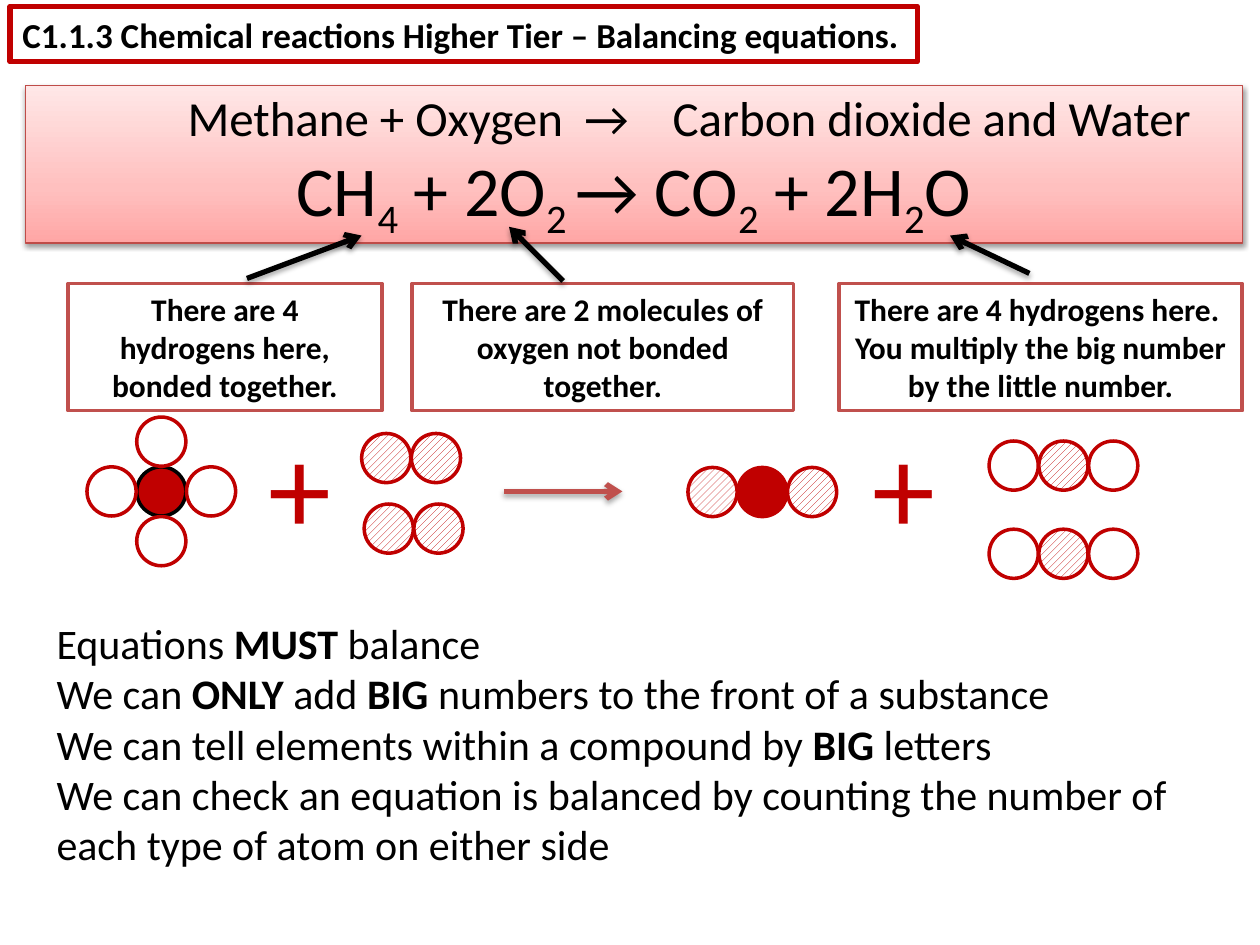
import pptx
import pptx.util
import pptx.dml.color
import pptx.enum.dml
import pptx.enum.shapes
import pptx.enum.text
import pptx.oxml
import pptx.oxml.ns

Inches, Pt = pptx.util.Inches, pptx.util.Pt
MSO = pptx.enum.shapes.MSO_SHAPE
ALIGN = pptx.enum.text.PP_ALIGN
ANCHOR = pptx.enum.text.MSO_ANCHOR
NS = pptx.oxml.ns.nsdecls("a")

HUES = {"red": "C00000", "rose": "C0504D", "edge": "BF4C48",
        "black": "000000", "white": "FFFFFF"}
FADE = [(0, "FFA6A5"), (35, "FFC0BF"), (100, "FFE7E7")]

# Content: *bold* and _subscript_ are marked in the text
TITLE = "*C1.1.3 Chemical reactions Higher Tier – Balancing equations.*"
WORDS = "\tMethane + Oxygen\t→\tCarbon dioxide and Water"
TABS = (1.19, 4.34, 5.04)
SYMBOLS = "CH_4_ + 2O_2 _→ CO_2_ + 2H_2_O"
RULES = [
    "Equations *MUST* balance",
    "We can *ONLY* add *BIG* numbers to the front of a substance",
    "We can tell elements within a compound by *BIG* letters",
    "We can check an equation is balanced by counting the number of "
    "each type of atom on either side",
]
# Note text, left, width, arrow start, arrow tip
NOTES = [
    ("*There are 4 hydrogens here, bonded together.*",
     0.54, 2.49, (1.96, 2.21), (2.87, 1.87)),
    ("*There are 2 molecules of oxygen not bonded together.*",
     3.27, 3.03, (4.47, 2.23), (4.04, 1.8)),
    ("*There are 4 hydrogens here.  You multiply the big number "
     "by the little number.*",
     6.66, 3.2, (8.17, 2.17), (7.54, 1.87)),
]
# Molecules: left, top, atoms as (element, column, row)
WATER = [("H", 0, 0), ("H", 2, 0), ("O", 1, 0)]
OXYGEN = [("O", 0, 0), ("O", 1, 0)]
METHANE = [("core", 1, 1), ("H", 2, 1), ("H", 0, 1), ("H", 1, 0), ("H", 1, 2)]
DIOXIDE = [("C", 1, 0), ("O", 0, 0), ("O", 2, 0)]
MOLES = [(0.69, 3.31, METHANE), (2.87, 3.44, OXYGEN), (2.89, 4, OXYGEN),
         (5.46, 3.71, DIOXIDE), (7.85, 3.5, WATER), (7.85, 4.2, WATER)]
ATOM, STEP = 0.39, 0.395
PLUSES = (2.03, 6.83)

prs = pptx.Presentation()
prs.slide_width, prs.slide_height = Inches(10), Inches(7.5)
slide = prs.slides.add_slide(prs.slide_layouts[6])


def rgb(name):
    return pptx.dml.color.RGBColor.from_string(HUES[name])


def shade(sppr, alpha, dist):
    """Replace any effect with a soft shadow that falls straight down."""
    for old in sppr.findall(pptx.oxml.ns.qn("a:effectLst")):
        sppr.remove(old)
    sppr.append(pptx.oxml.parse_xml(
        f'<a:effectLst {NS}><a:outerShdw blurRad="{Pt(3.1)}" dist="{Pt(dist)}" '
        f'dir="5400000" rotWithShape="0"><a:srgbClr val="{HUES["black"]}">'
        f'<a:alpha val="{alpha * 1000}"/></a:srgbClr></a:outerShdw></a:effectLst>'))


def form(kind, x, y, w, h, line, width, fill=None):
    part = slide.shapes.add_shape(kind, *map(Inches, (x, y, w, h)))
    part.shadow.inherit = False
    if fill:
        part.fill.solid()
        part.fill.fore_color.rgb = rgb(fill)
    else:
        part.fill.background()
    part.line.color.rgb = rgb(line)
    part.line.width = Pt(width)
    return part


def label(x, y, w, h):
    return slide.shapes.add_textbox(*map(Inches, (x, y, w, h)))


def write(part, text, size, color="black", align=ALIGN.LEFT,
          anchor=ANCHOR.MIDDLE, more=False):
    frame = part.text_frame
    frame.word_wrap = True
    frame.vertical_anchor = anchor
    para = frame.add_paragraph() if more else frame.paragraphs[0]
    para.alignment = align
    for i, chunk in enumerate(text.split("*")):
        for j, bit in enumerate(chunk.split("_")):
            if not bit:
                continue
            run = para.add_run()
            run.text = bit
            run.font.name, run.font.size = "Calibri", Pt(size)
            run.font.color.rgb = rgb(color)
            run.font.bold = i % 2 == 1
            if j % 2:
                run.font._element.set("baseline", "-25000")
    return para


def arrow(start, end, color):
    line = slide.shapes.add_connector(
        pptx.enum.shapes.MSO_CONNECTOR.STRAIGHT, *map(Inches, start + end))
    line.line.color.rgb = rgb(color)
    line.line.width = Pt(3)
    line.line._get_or_add_ln().append(
        pptx.oxml.parse_xml(f'<a:tailEnd {NS} type="arrow"/>'))
    shade(line._element.spPr, 35, 1.8)


# Title
write(form(MSO.RECTANGLE, 0.08, 0.05, 7.2, 0.44, "red", 3), TITLE, 20)

# Molecules, plus signs and reaction arrow
for left, top, atoms in MOLES:
    for kind, col, row in atoms:
        ball = form(MSO.OVAL, left + col * STEP, top + row * STEP, ATOM, ATOM,
                    "black" if kind == "core" else "red", 2,
                    "white" if kind == "H" else "red")
        if kind == "O":
            ball.fill.patterned()
            ball.fill.pattern = pptx.enum.dml.MSO_PATTERN.WIDE_UPWARD_DIAGONAL
            ball.fill.fore_color.rgb = rgb("red")
            ball.fill.back_color.rgb = rgb("white")
for x in PLUSES:
    write(label(x, 3.19, 0.55, 1.31), "+", 72, color="red", anchor=ANCHOR.TOP)
arrow((4, 3.9), (4.94, 3.9), "rose")

# Equation panel
panel = form(MSO.RECTANGLE, 0.2, 0.68, 9.66, 1.25, "edge", 0.75)
sppr = panel._element.spPr
stops = "".join(f'<a:gs pos="{p * 1000}"><a:srgbClr val="{c}"/></a:gs>'
                for p, c in FADE)
sppr.replace(sppr.find(pptx.oxml.ns.qn("a:noFill")), pptx.oxml.parse_xml(
    f'<a:gradFill {NS} rotWithShape="1"><a:gsLst>{stops}</a:gsLst>'
    '<a:lin ang="16200000" scaled="0"/></a:gradFill>'))
shade(sppr, 38, 1.6)
first = write(panel, WORDS, 28)
tabs = "".join(f'<a:tab pos="{Inches(t)}" algn="l"/>' for t in TABS)
first._p.get_or_add_pPr().append(
    pptx.oxml.parse_xml(f"<a:tabLst {NS}>{tabs}</a:tabLst>"))
write(panel, SYMBOLS, 40, align=ALIGN.CENTER, more=True)

# Rules
rules = label(0.35, 4.85, 9.02, 2.12)
for i, rule in enumerate(RULES):
    write(rules, rule, 24, anchor=ANCHOR.TOP, more=i > 0)

# Notes with their arrows
for text, left, width, start, tip in NOTES:
    note = form(MSO.RECTANGLE, left, 2.25, width, 1.01, "rose", 2, "white")
    write(note, text, 18, align=ALIGN.CENTER)
    arrow(start, tip, "black")

prs.save("out.pptx")
